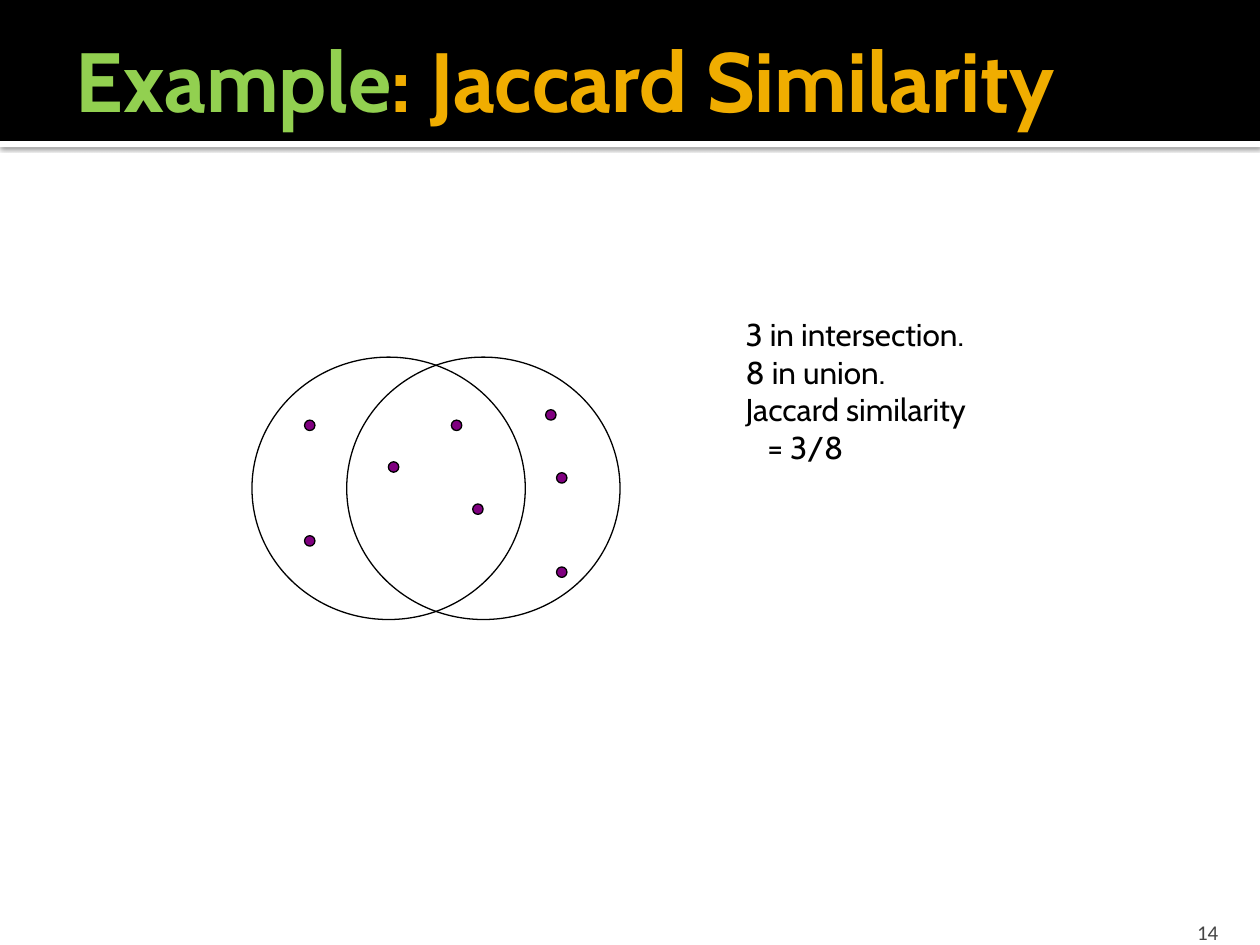
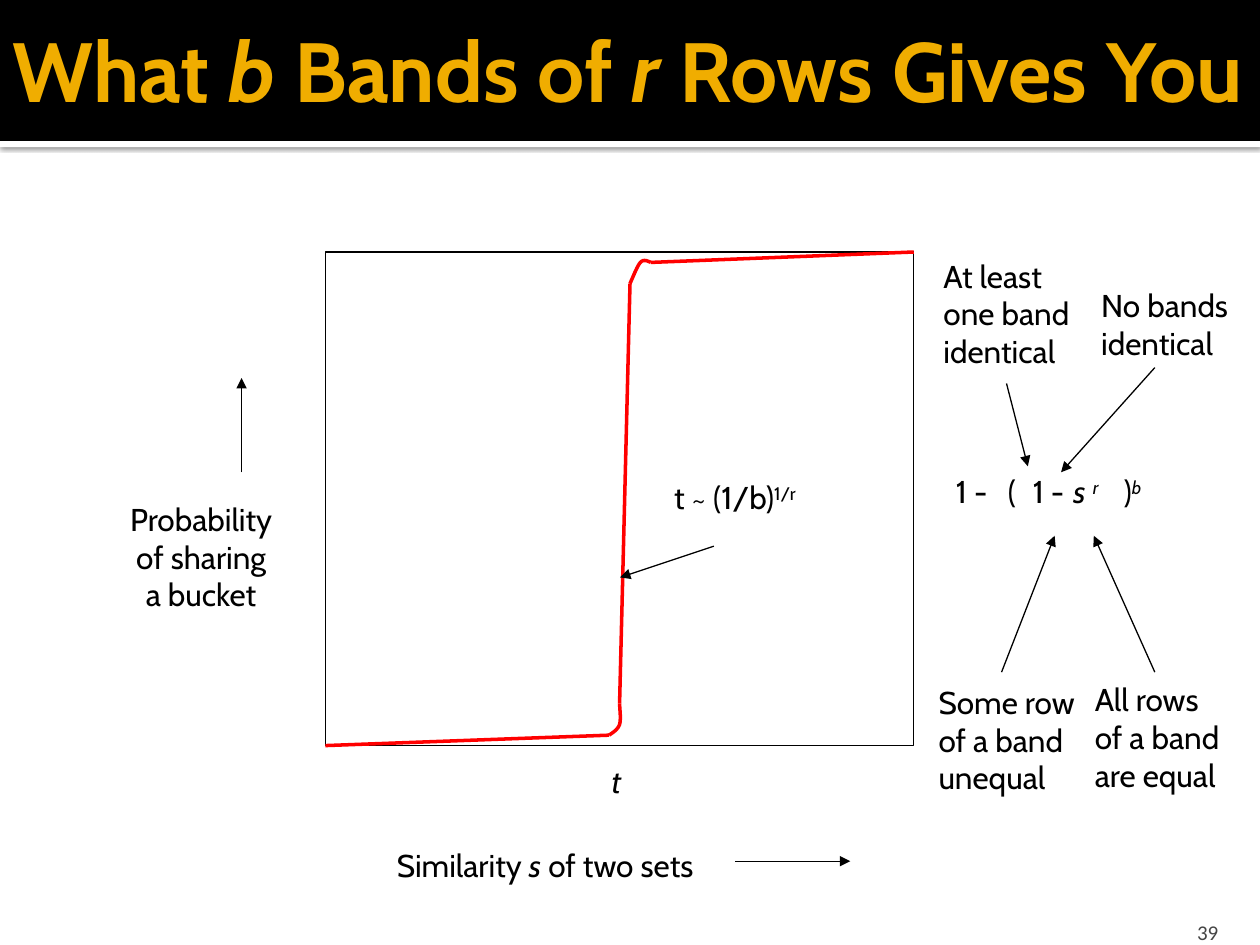
from lxml import etree
from pptx import Presentation
from pptx.dml.color import RGBColor
from pptx.enum.shapes import MSO_CONNECTOR, MSO_SHAPE
from pptx.enum.text import MSO_ANCHOR, MSO_AUTO_SIZE, PP_ALIGN
from pptx.oxml.ns import qn
from pptx.util import Cm, Pt

LEFT, CENTER, RIGHT = PP_ALIGN.LEFT, PP_ALIGN.CENTER, PP_ALIGN.RIGHT
OVAL, RECTANGLE = MSO_SHAPE.OVAL, MSO_SHAPE.RECTANGLE

COLORS = {
    "black": "000000", "white": "FFFFFF", "gold": "F0AD00", "green": "92D050",
    "purple": "800080", "red": "FF0000", "gray": "454545",
}
FONT, NUMBER_FONT = "Cabin", "Calibri"
SLIDE_WIDTH, SLIDE_HEIGHT, BAND_HEIGHT = 25.4, 19.05, 2.84
TITLE_ONLY = 5

# A line of text is a list of spans: (text, style); style is "", "italic",
# "super", "italic super" or the name of a colour. Lengths are in centimetres.
JACCARD = {
    "number": "14",
    "title": [("Example", "green"), (": Jaccard Similarity", "")],
    "title_box": (1.27, 0.43, 24.13, 2.34),
    "circles": [(6.99, 7.2), (5.08, 7.2)],
    "circle_size": (5.51, 5.29),
    "dots": [(6.14, 8.47), (6.14, 10.8), (7.83, 9.31), (9.53, 10.16),
             (9.1, 8.47), (11.22, 9.53), (11.22, 11.43), (11, 8.26)],
    "dot_size": (0.21, 0.21),
    "result": ["3 in intersection.", "8 in union.", "Jaccard similarity", "= 3/8"],
    "result_box": (14.78, 6.22, 6.91, 4.32),
    "result_indent": 0.44,
}

BANDS = {
    "number": "39",
    "title": [("What ", ""), ("b ", "italic"), ("Bands of ", ""),
              ("r ", "italic"), ("Rows Gives You", "")],
    "title_box": (0, -0.2, 25.4, 3.18),
    "plot": (6.56, 5.08, 11.86, 9.95),
    "axis_labels": [
        ((7.47, 16.93, 7.04, 1.02),
         [[("Similarity ", ""), ("s", "italic"), (" of two sets", "")]]),
        ((2.34, 9.95, 3.43, 2.54), ["Probability", "of sharing", "a bucket"]),
        ((12.07, 15.24, 0.71, 1.02), [[("t", "italic")]]),
    ],
    "notes": [
        ((18.77, 5.05, 3.12, 2.54), ["At least", "one band", "identical"]),
        ((21.95, 5.64, 3.15, 1.78), ["No bands", "identical"]),
        ((18.67, 13.64, 3.33, 2.54), ["Some row", "of a band", "unequal"]),
        ((21.82, 13.59, 3.18, 2.54), ["All rows", "of a band", "are equal"]),
        ((13.34, 9.52, 4.75, 1.27), [[("t ~ (1/b)", ""), ("1/r", "super")]]),
    ],
    "formula_top": 9.4,
    "formula": [
        (19.02, 1.55, [("1 -", "")]),
        (20.07, 0.84, [("(", "")]),
        (20.57, 1.55, [("1 -", "")]),
        (21.39, 1.52, [("s ", "italic"), ("r", "italic super")]),
        (22.4, 1.32, [(")", ""), ("b", "italic super")]),
    ],
    "arrows": [
        ((14.82, 17.36), (17.14, 17.36)),
        ((4.87, 9.52), (4.87, 7.62)),
        ((23.28, 13.55), (22.05, 10.8)),
        ((20.19, 13.55), (21.26, 10.8)),
        ((23.28, 7.41), (21.39, 9.52)),
        ((20.29, 7.73), (20.72, 9.4)),
        ((14.39, 11.01), (12.5, 11.64)),
    ],
    "curve_lines": [
        ((6.56, 15.03), (12.28, 14.82)),
        ((12.49, 14.18), (12.7, 5.72)),
        ((13.12, 5.29), (18.42, 5.08)),
    ],
    # Each bend: start, then control, control, end for every cubic
    "curve_bends": [
        [(12.28, 14.82), (12.37, 14.76), (12.45, 14.71), (12.49, 14.61),
         (12.52, 14.5), (12.5, 14.35), (12.49, 14.18)],
        [(12.7, 5.72), (12.78, 5.54), (12.85, 5.36), (12.91, 5.29),
         (12.98, 5.22), (13.05, 5.26), (13.12, 5.29)],
    ],
}


def rgb(name):
    return RGBColor.from_string(COLORS[name])


def cms(values):
    return [Cm(value) for value in values]


def style_line(line, color, width):
    line.color.rgb = rgb(color)
    line.width = Pt(width)


def add_shape(page, kind, box, fill=None, line=None):
    shape = page.shapes.add_shape(kind, *cms(box))
    shape.shadow.inherit = False
    if fill:
        shape.fill.solid()
        shape.fill.fore_color.rgb = rgb(fill)
    else:
        shape.fill.background()
    if line:
        style_line(shape.line, line, 0.75)
    else:
        shape.line.fill.background()
    return shape


def add_line(page, start, end, color="black", width=0.75, arrow=False):
    connector = page.shapes.add_connector(MSO_CONNECTOR.STRAIGHT, *cms(start + end))
    style_line(connector.line, color, width)
    properties = connector.element.spPr
    if arrow:
        etree.SubElement(properties.find(qn("a:ln")), qn("a:tailEnd"), type="triangle")
    etree.SubElement(properties, qn("a:effectLst"))


def fill_paragraph(para, line, size, color="black", font=FONT, align=LEFT):
    para.alignment = align
    para.font.name, para.font.size = font, Pt(size)
    para.font.color.rgb = rgb(color)
    for text, style in [(line, "")] if isinstance(line, str) else line:
        span = para.add_run()
        span.text = text
        if "italic" in style:
            span.font.italic = True
        if "super" in style:
            span._r.get_or_add_rPr().set("baseline", "30000")
        if style in COLORS:
            span.font.color.rgb = rgb(style)


def add_text(page, box, lines, align=LEFT):
    text_box = page.shapes.add_textbox(*cms(box))
    frame = text_box.text_frame
    frame.word_wrap = False
    frame.auto_size = MSO_AUTO_SIZE.SHAPE_TO_FIT_TEXT
    for index, line in enumerate(lines):
        para = frame.add_paragraph() if index else frame.paragraphs[0]
        fill_paragraph(para, line, 18, align=align)
    return text_box


def set_title(page, line, box):
    title = page.shapes.title
    title.left, title.top, title.width, title.height = cms(box)
    frame = title.text_frame
    frame.auto_size = MSO_AUTO_SIZE.NONE
    frame.word_wrap = True
    frame.vertical_anchor = MSO_ANCHOR.MIDDLE
    frame.margin_left = Cm(0.25)
    frame.margin_top = frame.margin_right = frame.margin_bottom = Cm(0.13)
    fill_paragraph(frame.paragraphs[0], line, 48, "gold")
    frame.paragraphs[0].font.bold = True


def add_number(page, number):
    frame = page.shapes.add_textbox(*cms((22.78, 18.29, 2.03, 0.76))).text_frame
    frame.word_wrap = True
    frame.vertical_anchor = MSO_ANCHOR.BOTTOM
    frame.margin_bottom = 0
    fill_paragraph(frame.paragraphs[0], number, 12, "gray", NUMBER_FONT, RIGHT)


def add_shadow(shape):
    effects = shape.element.spPr.find(qn("a:effectLst"))
    shadow = etree.SubElement(effects, qn("a:outerShdw"), blurRad=str(Pt(2.5)),
                              dist=str(Pt(0.8)), dir="5400000", rotWithShape="0")
    color = etree.SubElement(shadow, qn("a:srgbClr"), val=COLORS["black"])
    etree.SubElement(color, qn("a:alpha"), val="60000")


def move_bands_to_layout(page):
    """Draw the title bands and put them at the back of the shared layout."""
    stripe = add_shape(page, RECTANGLE, (0, BAND_HEIGHT, SLIDE_WIDTH, 0.13), "white")
    add_shadow(stripe)
    band = add_shape(page, RECTANGLE, (0, 0, SLIDE_WIDTH, BAND_HEIGHT), "black")
    for index, shape in enumerate((stripe, band)):
        page.slide_layout.shapes.element.insert(2 + index, shape.element)


def add_page(deck, content):
    page = deck.slides.add_slide(deck.slide_layouts[TITLE_ONLY])
    set_title(page, content["title"], content["title_box"])
    add_number(page, content["number"])
    return page


def cubic_points(controls, steps=8):
    """Return points along a chain of cubic Bézier curves."""
    points = [controls[0]]
    for first in range(0, len(controls) - 1, 3):
        corners = controls[first:first + 4]
        for step in range(1, steps + 1):
            t = step / steps
            weights = ((1 - t) ** 3, 3 * t * (1 - t) ** 2, 3 * t * t * (1 - t), t ** 3)
            points.append(tuple(sum(w * corner[axis] for w, corner in zip(weights, corners))
                                for axis in (0, 1)))
    return points


def add_bend(page, controls):
    start, *rest = [cms(point) for point in cubic_points(controls)]
    builder = page.shapes.build_freeform(*start)
    builder.add_line_segments(rest, close=False)
    bend = builder.convert_to_shape()
    bend.shadow.inherit = False
    bend.fill.background()
    style_line(bend.line, "red", 2)


def draw_jaccard(page, content):
    for corner in content["circles"]:
        add_shape(page, OVAL, corner + content["circle_size"], line="black")
    for corner in content["dots"]:
        add_shape(page, OVAL, corner + content["dot_size"], "purple", "black")
    result = add_text(page, content["result_box"], content["result"])
    last_line = result.element.txBody.p_lst[-1]
    last_line.get_or_add_pPr().set("marL", str(Cm(content["result_indent"])))


def draw_bands(page, content):
    add_shape(page, RECTANGLE, content["plot"], line="black")
    for start, end in content["curve_lines"]:
        add_line(page, start, end, "red", 2)
    for controls in content["curve_bends"]:
        add_bend(page, controls)
    for box, lines in content["axis_labels"]:
        add_text(page, box, lines, CENTER)
    for box, lines in content["notes"]:
        add_text(page, box, lines)
    for left, width, line in content["formula"]:
        add_text(page, (left, content["formula_top"], width, 1.27), [line])
    for start, end in content["arrows"]:
        add_line(page, start, end, arrow=True)


def main():
    deck = Presentation()
    deck.slide_width, deck.slide_height = Cm(SLIDE_WIDTH), Cm(SLIDE_HEIGHT)
    jaccard_page = add_page(deck, JACCARD)
    move_bands_to_layout(jaccard_page)
    draw_jaccard(jaccard_page, JACCARD)
    draw_bands(add_page(deck, BANDS), BANDS)
    deck.save("out.pptx")


if __name__ == "__main__":
    main()
